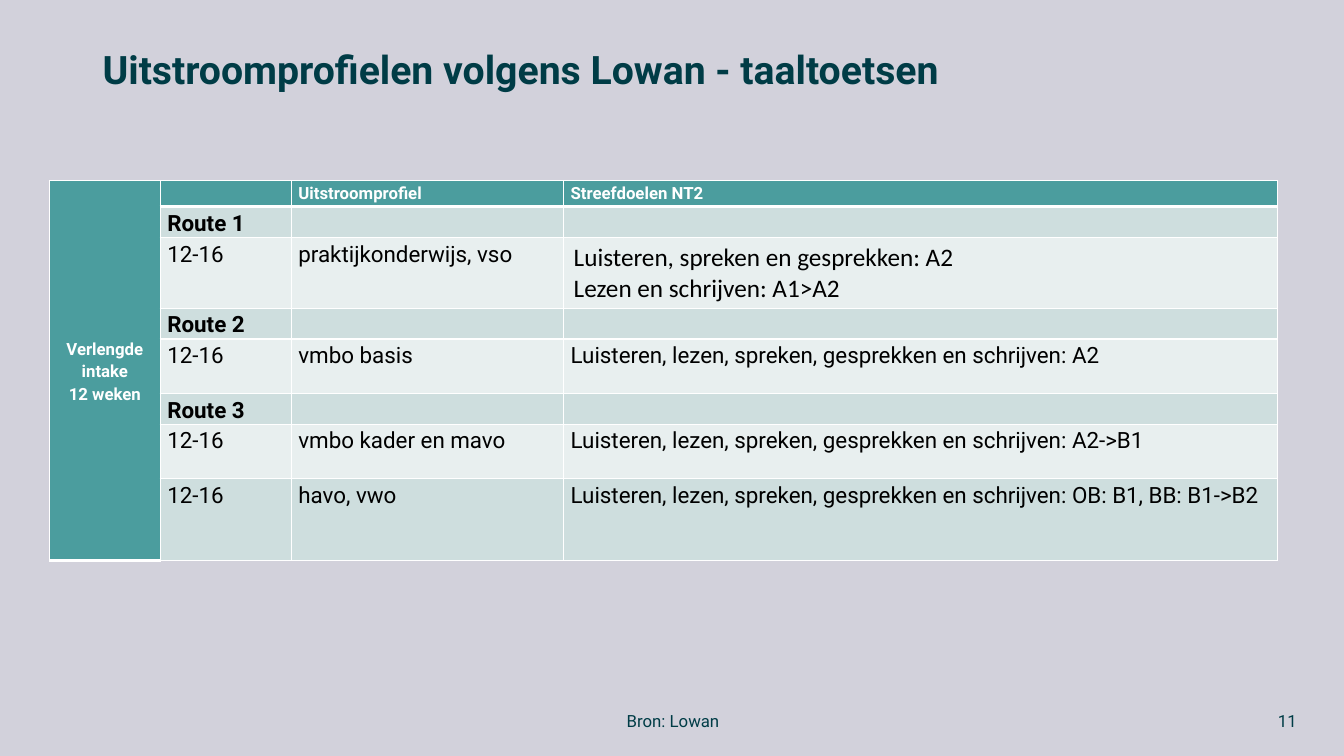
from pptx import Presentation
from pptx.dml.color import RGBColor
from pptx.enum.text import MSO_ANCHOR, PP_ALIGN
from pptx.oxml.ns import qn
from pptx.util import Inches, Pt
from lxml import etree

TOP, MIDDLE = MSO_ANCHOR.TOP, MSO_ANCHOR.MIDDLE
LEFT, CENTER, RIGHT = PP_ALIGN.LEFT, PP_ALIGN.CENTER, PP_ALIGN.RIGHT

BACKGROUND = RGBColor(0xD2, 0xD1, 0xDB)
PETROL = RGBColor(0x00, 0x3C, 0x46)
TEAL = RGBColor(0x4B, 0x9D, 0x9E)
BAND_DARK = RGBColor(0xCE, 0xDE, 0xDE)
BAND_LIGHT = RGBColor(0xE8, 0xEF, 0xEF)
WHITE = RGBColor(0xFF, 0xFF, 0xFF)
BLACK = RGBColor(0x00, 0x00, 0x00)

TITLE = "Uitstroomprofielen volgens Lowan - taaltoetsen"
SOURCE = "Bron: Lowan"
PAGE_NUMBER = "11"
INTAKE = "Verlengde\nintake\n12 weken"
SKILLS = "Luisteren, lezen, spreken, gesprekken en schrijven: "
ROWS = [
    ("", "Uitstroomprofiel", "Streefdoelen NT2"),
    ("Route 1", "", ""),
    ("12-16", "praktijkonderwijs, vso",
     "Luisteren, spreken en gesprekken: A2\nLezen en schrijven: A1>A2"),
    ("Route 2", "", ""),
    ("12-16", "vmbo basis", SKILLS + "A2"),
    ("Route 3", "", ""),
    ("12-16", "vmbo kader en mavo", SKILLS + "A2->B1"),
    ("12-16", "havo, vwo", SKILLS + "OB: B1, BB: B1->B2"),
]
COLUMN_WIDTHS = [1.1, 1.3, 2.7, 7.08]
ROW_HEIGHTS = [0.26, 0.3, 0.7, 0.3, 0.54, 0.3, 0.54, 0.81]


def write(frame, text, size, color, bold=False, align=LEFT, spacing=1.0, font="Roboto"):
    frame.text = text
    for para in frame.paragraphs:
        para.alignment = align
        para.line_spacing = spacing
        para.font.name = font
        para.font.size = Pt(size)
        para.font.bold = bold
        para.font.color.rgb = color


def add_text(page, position, text, size, anchor=MIDDLE, inset_top=0.05, **style):
    box = page.shapes.add_textbox(*[Inches(length) for length in position])
    frame = box.text_frame
    frame.word_wrap = True
    frame.vertical_anchor = anchor
    frame.margin_top = Inches(inset_top)
    write(frame, text, size, PETROL, **style)


def set_borders(cell, bottom_width):
    """Draw white cell borders; they must precede the fill in the cell XML."""
    properties = cell._tc.get_or_add_tcPr()
    for index, side in enumerate(("lnL", "lnR", "lnT", "lnB")):
        width = bottom_width if side == "lnB" else 1
        line = etree.Element(qn("a:" + side), w=str(Pt(width)))
        fill = etree.SubElement(line, qn("a:solidFill"))
        etree.SubElement(fill, qn("a:srgbClr"), val=str(WHITE))
        properties.insert(index, line)


def style_cell(cell, fill, bottom_width, horizontal=0.07, vertical=0):
    cell.margin_left = cell.margin_right = Inches(horizontal)
    cell.margin_top = cell.margin_bottom = Inches(vertical)
    cell.fill.solid()
    cell.fill.fore_color.rgb = fill
    set_borders(cell, bottom_width)


def add_profile_table(page):
    frame = page.shapes.add_table(
        len(ROWS), len(COLUMN_WIDTHS), Inches(0.49), Inches(1.79),
        Inches(sum(COLUMN_WIDTHS)), Inches(sum(ROW_HEIGHTS)))
    table = frame.table
    for column, width in zip(table.columns, COLUMN_WIDTHS):
        column.width = Inches(width)
    for row, height in zip(table.rows, ROW_HEIGHTS):
        row.height = Inches(height)

    intake = table.cell(0, 0)
    intake.merge(table.cell(len(ROWS) - 1, 0))
    intake.vertical_anchor = MIDDLE
    write(intake.text_frame, INTAKE, 12, WHITE, True, CENTER, 1.15)

    for r, texts in enumerate(ROWS):
        header = r == 0
        style_cell(table.cell(r, 0), TEAL, 3)
        band = TEAL if header else BAND_DARK if r % 2 else BAND_LIGHT
        for c, text in enumerate(texts, start=1):
            cell = table.cell(r, c)
            if "\n" in text:
                style_cell(cell, band, 1, 0.1, 0.05)
                write(cell.text_frame, text, 18, BLACK, font="Calibri")
                continue
            style_cell(cell, band, 3 if header else 1)
            size = 12 if header or not text else 16
            bold = header or text.startswith("Route")
            write(cell.text_frame, text, size, WHITE if header else BLACK, bold, spacing=1.15)


def main():
    deck = Presentation()
    deck.slide_width, deck.slide_height = Inches(13.33), Inches(7.5)
    page = deck.slides.add_slide(deck.slide_layouts[6])
    page.background.fill.solid()
    page.background.fill.fore_color.rgb = BACKGROUND

    add_text(page, (0.92, 0.4, 9.76, 1.45), TITLE, 28, TOP, 0.1, bold=True, spacing=0.9)
    add_profile_table(page)
    add_text(page, (3.89, 6.95, 5.57, 0.4), SOURCE, 12, align=CENTER)
    add_text(page, (9.96, 6.95, 3, 0.4), PAGE_NUMBER, 12, align=RIGHT)
    deck.save("out.pptx")


if __name__ == "__main__":
    main()
